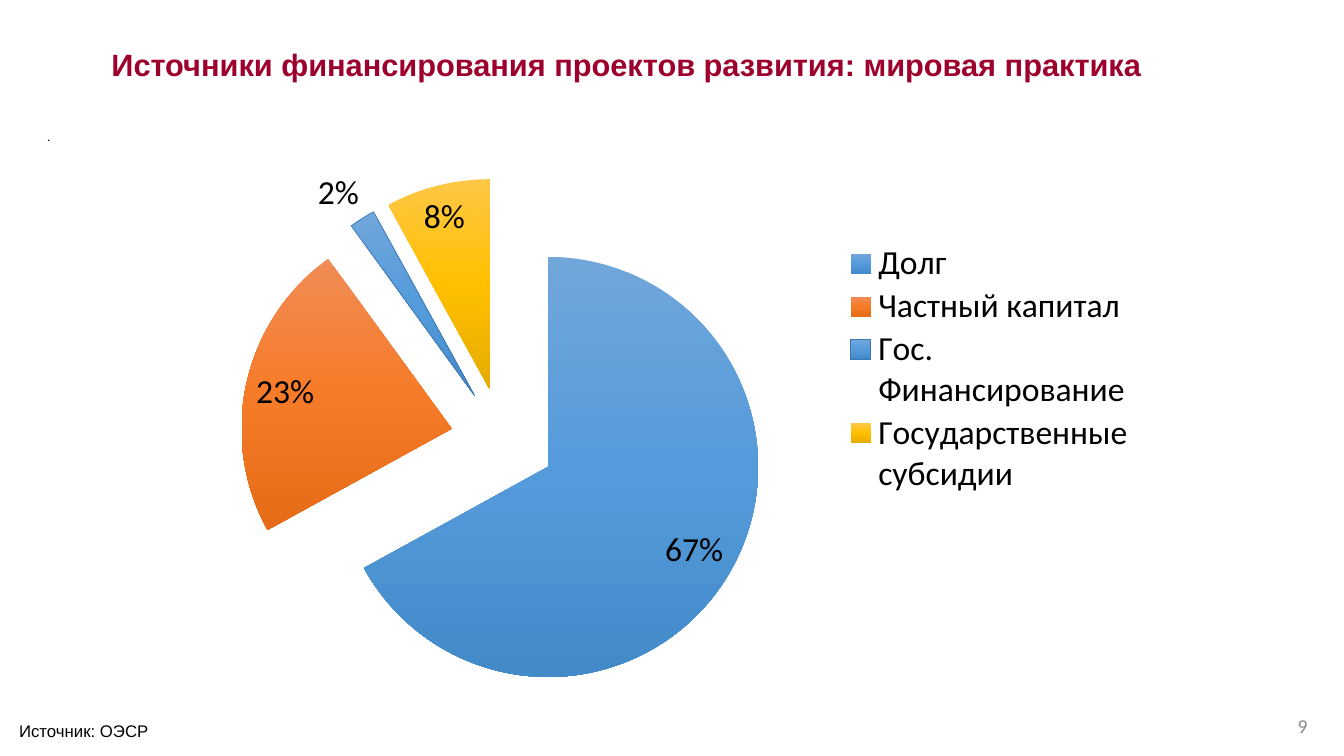
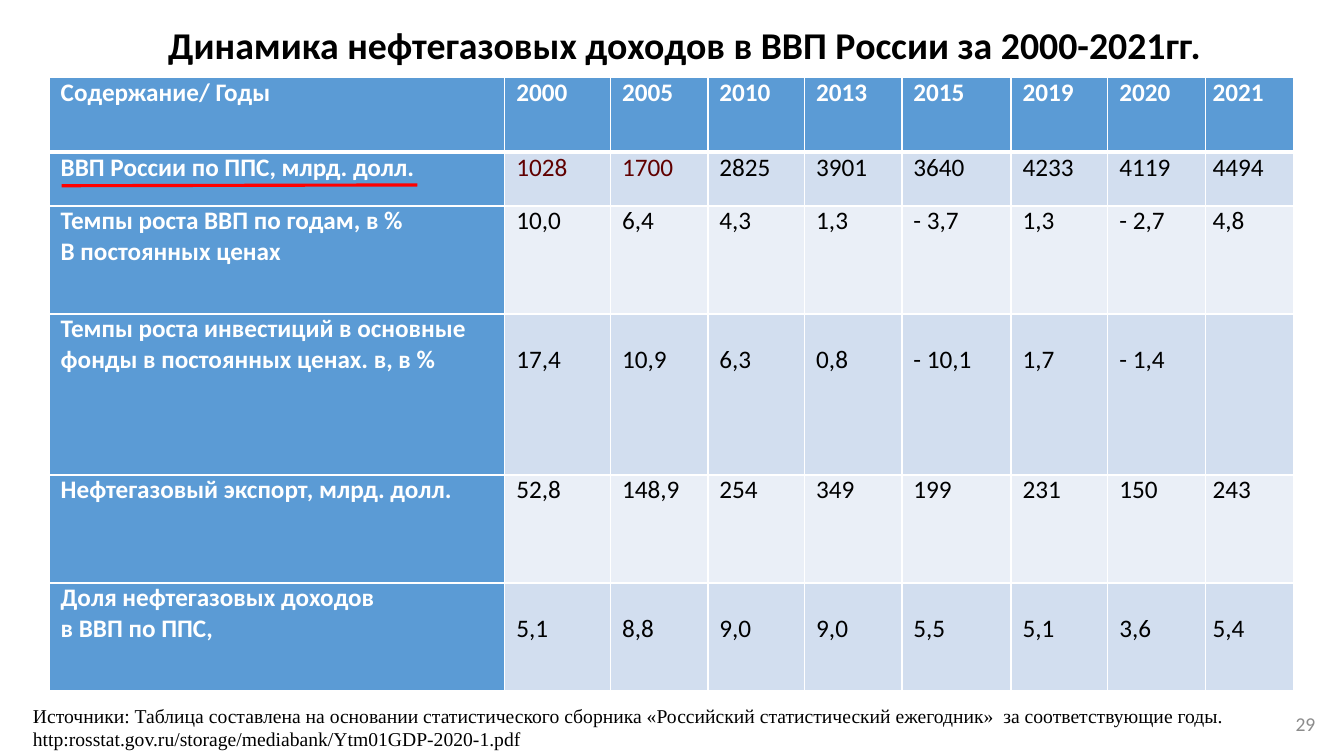
from dataclasses import dataclass

from lxml.etree import SubElement
from pptx import Presentation
from pptx.chart.data import CategoryChartData
from pptx.dml.color import RGBColor
from pptx.enum.chart import XL_CHART_TYPE as ChartType
from pptx.enum.chart import XL_LABEL_POSITION as LabelPos
from pptx.enum.chart import XL_LEGEND_POSITION as LegendPos
from pptx.enum.shapes import MSO_CONNECTOR as Connector
from pptx.enum.text import MSO_ANCHOR as Anchor
from pptx.enum.text import PP_ALIGN as Align
from pptx.oxml import parse_xml
from pptx.oxml.ns import nsdecls, qn
from pptx.util import Cm, Pt

COLORS = {
    "text": "000000", "title": "9E002D", "page": "8C8C8C", "white": "FFFFFF",
    "blue": "5B9BD5", "band_dark": "D2DEEF", "band_light": "EAEFF7",
    "early": "600000", "underline": "FF0000", "slice_edge": "3D77B5",
}
BLUE_FADE = ("71A6DB", "559BDB", "438AC9")
ORANGE_FADE = ("F18C55", "F67B28", "E56B17")
YELLOW_FADE = ("FFC746", "FFC000", "E5AC00")
LINE_18PT = 0.77


@dataclass
class Label:
    """A text box: place in cm, one string per paragraph, insets left, top, right, bottom in cm."""
    box: tuple[float, float, float, float]
    lines: list[str]
    size: float
    font: str = "Calibri"
    color: str = "text"
    bold: bool = False
    align: Align = Align.LEFT
    anchor: Anchor = Anchor.TOP
    insets: tuple[float, float, float, float] = (0.25, 0.13, 0.25, 0.13)


@dataclass
class Slice:
    name: str
    value: int
    fade: tuple[str, str, str]
    edge: str = ""


@dataclass
class Row:
    height: float
    head: list[str]
    values: list[str]
    drop: float = 0


SLICES = [
    Slice("Долг", 67, BLUE_FADE),
    Slice("Частный капитал", 23, ORANGE_FADE),
    Slice("Гос. Финансирование", 2, BLUE_FADE, "slice_edge"),
    Slice("Государственные субсидии", 8, YELLOW_FADE),
]

COLUMNS = [11.48, 2.67, 2.45, 2.44, 2.45, 2.75, 2.44, 2.45, 2.24]
ROWS = [
    Row(1.87, ["Содержание/ Годы"],
        ["2000", "2005", "2010", "2013", "2015", "2019", "2020", "2021"]),
    Row(1.36, ["ВВП России по ППС, млрд. долл."],
        ["1028", "1700", "2825", "3901", "3640", "4233", "4119", "4494"]),
    Row(2.72, ["Темпы роста ВВП по годам, в %", "В постоянных ценах"],
        ["10,0", "6,4", "4,3", "1,3", "- 3,7", "1,3", "- 2,7", "4,8"]),
    Row(4.06, ["Темпы роста инвестиций в основные", "фонды в постоянных ценах. в, в %"],
        ["17,4", "10,9", "6,3", "0,8", "- 10,1", "1,7", "- 1,4", ""], LINE_18PT),
    Row(2.72, ["Нефтегазовый экспорт, млрд. долл."],
        ["52,8", "148,9", "254", "349", "199", "231", "150", "243"]),
    Row(2.72, ["Доля нефтегазовых доходов", "в ВВП по ППС,"],
        ["5,1", "8,8", "9,0", "9,0", "5,5", "5,1", "3,6", "5,4"], LINE_18PT),
]


def rgb(name: str) -> RGBColor:
    return RGBColor.from_string(COLORS[name])


def write(tf, lines: list[str], size: float, font: str, color: str, bold: bool,
          align: Align = Align.LEFT) -> None:
    for i, line in enumerate(lines):
        p = tf.paragraphs[0] if i == 0 else tf.add_paragraph()
        p.alignment = align
        r = p.add_run()
        r.text = line
        r.font.size, r.font.name, r.font.bold = Pt(size), font, bold
        r.font.color.rgb = rgb(color)


def fill_label(sp, label: Label) -> None:
    tf = sp.text_frame
    tf.word_wrap = True
    tf.vertical_anchor = label.anchor
    tf.margin_left, tf.margin_top, tf.margin_right, tf.margin_bottom = map(Cm, label.insets)
    write(tf, label.lines, label.size, label.font, label.color, label.bold, label.align)


def add_label(s, label: Label) -> None:
    fill_label(s.shapes.add_textbox(*map(Cm, label.box)), label)


def add_outline_label(s, label: Label) -> None:
    """A label held by an invisible rectangular freeform."""
    x, y, w, h = map(Cm, label.box)
    outline = s.shapes.build_freeform(x, y)
    outline.add_line_segments([(x + w, y), (x + w, y + h), (x, y + h)], close=True)
    sp = outline.convert_to_shape()
    sp.shadow.inherit = False
    sp.fill.background()
    sp.line.fill.background()
    fill_label(sp, label)


def add_page_number(s, number: int, left: float, top: float) -> None:
    add_label(s, Label((left, top, 7.62, 1.02), [str(number)], 14, color="page",
                       align=Align.RIGHT, anchor=Anchor.MIDDLE))


def manual_layout(x: float, y: float, w: float, h: float, inner: bool = False):
    """Chart layout in fractions of the chart area."""
    target = '<c:layoutTarget val="inner"/>' if inner else ""
    return parse_xml(
        f'<c:layout {nsdecls("c")}><c:manualLayout>{target}'
        '<c:xMode val="edge"/><c:yMode val="edge"/>'
        f'<c:x val="{x}"/><c:y val="{y}"/><c:w val="{w}"/><c:h val="{h}"/>'
        '</c:manualLayout></c:layout>')


def set_layout(parent, layout, index: int) -> None:
    for old in parent.findall(qn("c:layout")):
        parent.remove(old)
    parent.insert(index, layout)


def fill_stops(stops, fade: tuple[str, str, str]) -> None:
    for old in list(stops):
        stops.remove(old)
    for i, color in enumerate(fade):
        gs = SubElement(stops, qn("a:gs"), pos=str(i * 50000))
        SubElement(gs, qn("a:srgbClr"), val=color)


def add_pie(s) -> None:
    data = CategoryChartData()
    data.categories = [item.name for item in SLICES]
    data.add_series("Series 1", [item.value for item in SLICES])
    chart = s.shapes.add_chart(ChartType.PIE, Cm(4.34), Cm(3.1), Cm(24.51), Cm(14.94), data).chart
    chart.has_title = False
    chart.font.size, chart.font.name = Pt(24), "Calibri"
    chart.font.color.rgb = rgb("text")

    chart.has_legend = True
    chart.legend.position = LegendPos.RIGHT
    chart.legend.include_in_layout = False

    plot = chart.plots[0]
    plot.vary_by_categories = True
    plot.has_data_labels = True
    labels = plot.data_labels
    labels.show_percentage, labels.show_value = True, False
    labels.number_format, labels.number_format_is_linked = "0%", False
    labels.position = LabelPos.BEST_FIT

    for i, item in enumerate(SLICES):
        look = plot.series[0].points[i].format
        look.fill.gradient()
        look.fill.gradient_angle = 270
        if item.edge:
            look.line.color.rgb = rgb(item.edge)
            look.line.width = Pt(0.5)
        else:
            look.line.fill.background()

    root = chart.element
    for stops, item in zip(root.iter(qn("a:gsLst")), SLICES):
        fill_stops(stops, item.fade)
    first_point = next(root.iter(qn("c:dPt")))
    first_point.addprevious(parse_xml(f'<c:explosion {nsdecls("c")} val="25"/>'))
    set_layout(next(root.iter(qn("c:plotArea"))), manual_layout(0.07, 0.09, 0.54, 0.89, True), 0)
    set_layout(next(root.iter(qn("c:legend"))), manual_layout(0.69, 0.2, 0.3, 0.43), 1)


def add_borders(cell, row: int) -> None:
    """White cell borders, heavier between the header and the body."""
    widths = {"L": 1, "R": 1, "T": 3 if row == 1 else 1, "B": 3 if row == 0 else 1}
    tc_pr = cell._tc.get_or_add_tcPr()
    for side, width in widths.items():
        ln = SubElement(tc_pr, qn(f"a:ln{side}"), w=str(Pt(width)))
        SubElement(SubElement(ln, qn("a:solidFill")), qn("a:srgbClr"), val=COLORS["white"])


def add_income_table(s) -> None:
    heights = [row.height for row in ROWS]
    table = s.shapes.add_table(len(ROWS), len(COLUMNS), Cm(1.24), Cm(1.96),
                               Cm(sum(COLUMNS)), Cm(sum(heights))).table
    table.first_row = table.horz_banding = False
    for column, width in zip(table.columns, COLUMNS):
        column.width = Cm(width)
    for y, row in enumerate(ROWS):
        table.rows[y].height = Cm(row.height)
        for x, lines in enumerate([row.head, *([value] for value in row.values)]):
            cell = table.cell(y, x)
            heading = y == 0 or x == 0
            cell.margin_left = Cm(0.19 if x == len(COLUMNS) - 1 else 0.29)
            cell.margin_right = Cm(0.18)
            cell.margin_top = Cm(0 if heading else row.drop)
            cell.margin_bottom = Cm(0)
            add_borders(cell, y)
            cell.fill.solid()
            band = "band_dark" if y % 2 else "band_light"
            cell.fill.fore_color.rgb = rgb("blue" if heading else band)
            color = "white" if heading else "early" if y == 1 and x < 3 else "text"
            write(cell.text_frame, lines, 18, "Calibri", color, heading)


def add_underline(s) -> None:
    line = s.shapes.add_connector(Connector.STRAIGHT, Cm(1.55), Cm(4.68), Cm(10.52), Cm(4.66))
    line.line.color.rgb = rgb("underline")
    line.line.width = Pt(2.25)
    SubElement(line._element.spPr, qn("a:effectLst"))


def build_sources_slide(s) -> None:
    add_outline_label(s, Label(
        (2.73, 0.78, 30.48, 1.68),
        ["Источники финансирования проектов развития: мировая практика"],
        22, "Arial", "title", True, anchor=Anchor.MIDDLE, insets=(0.08,) * 4))
    add_label(s, Label((0.94, 3.12, 31.19, 0.64), ["."], 9))
    add_pie(s)
    add_label(s, Label((0.23, 18.03, 6.65, 0.74), ["Источник: ОЭСР"], 12, "Arial"))
    add_page_number(s, 9, 25.58, 17.78)


def build_income_slide(s) -> None:
    add_label(s, Label((3.63, 0, 29.21, 3.68),
                       ["Динамика нефтегазовых доходов в ВВП России за 2000-2021гг."],
                       27, bold=True, anchor=Anchor.MIDDLE, insets=(0.61, 0.13, 0.25, 1.57)))
    add_income_table(s)
    add_label(s, Label((0.48, 16.81, 32, 2.24), [
        "Источники: Таблица составлена на основании статистического сборника "
        "«Российский статистический ежегодник»  за соответствующие годы.",
        "http:rosstat.gov.ru/storage/mediabank/Ytm01GDP-2020-1.pdf",
    ], 14, "Times New Roman", insets=(0.35, 0.92, 0.25, 0.13)))
    add_underline(s)
    add_page_number(s, 29, 25.78, 17.73)


def main() -> None:
    prs = Presentation()
    prs.slide_width, prs.slide_height = Cm(33.87), Cm(19.05)
    for build in (build_sources_slide, build_income_slide):
        build(prs.slides.add_slide(prs.slide_layouts[6]))
    prs.save("out.pptx")


if __name__ == "__main__":
    main()
